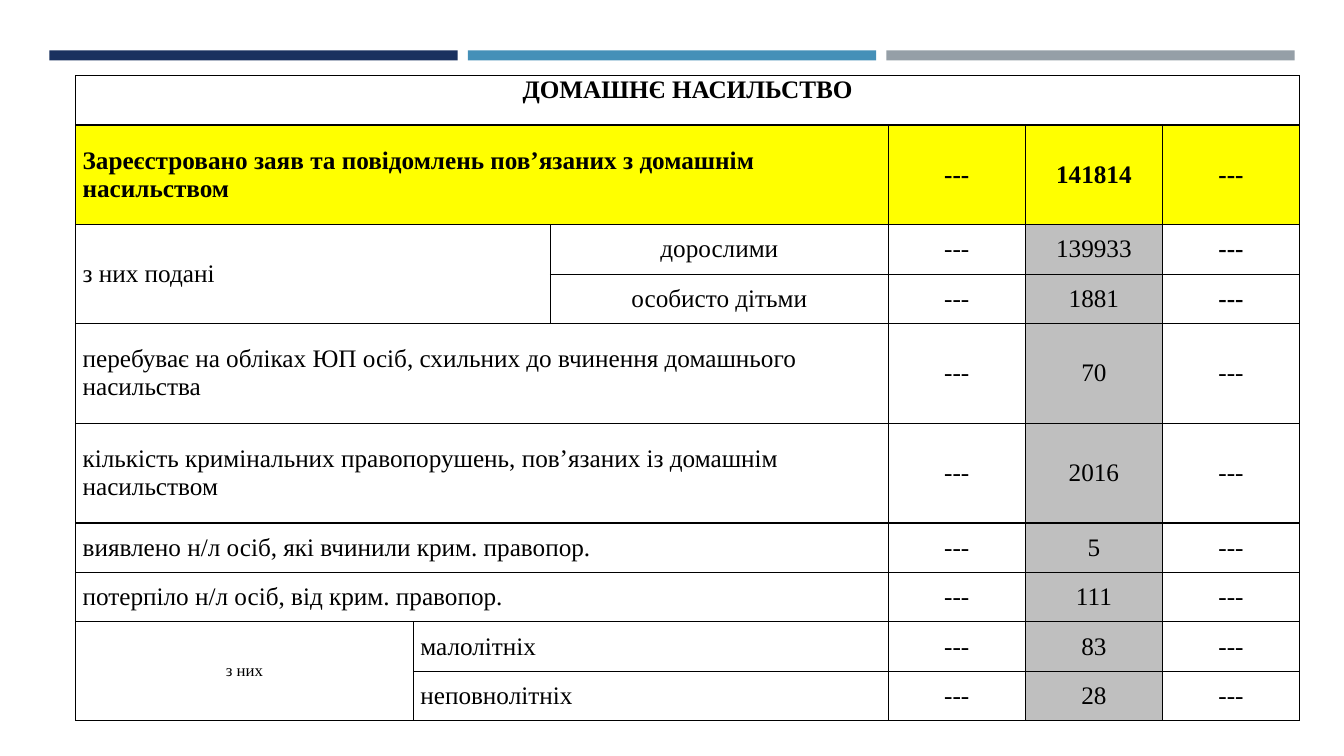
from lxml import etree
from pptx import Presentation
from pptx.dml.color import RGBColor
from pptx.enum.shapes import MSO_SHAPE
from pptx.enum.text import MSO_ANCHOR, PP_ALIGN
from pptx.oxml.ns import qn
from pptx.util import Inches, Pt

COLORS = {
    "navy": "1A315F",
    "blue": "4590B8",
    "steel": "959FA7",
    "black": "000000",
    "yellow": "FFFF00",
    "grey": "BFBFBF",
}
COLUMN_WIDTHS = [3.35, 1.36, 3.35, 1.36, 1.36, 1.36]
ROW_HEIGHTS = [0.49, 0.99, 0.49, 0.49, 0.99, 0.99, 0.49, 0.49, 0.49, 0.49]
TOTAL_ROW = 1
FIRST_VALUE_COLUMN, COUNT_COLUMN, LAST_COLUMN = 3, 4, 5
BOLD_DASH_ROWS = (1, 2, 3)
COUNTS = ["141814", "139933", "1881", "70", "2016", "5", "111", "83", "28"]
CENTER, LEFT = PP_ALIGN.CENTER, PP_ALIGN.LEFT

# row, column, last row, last column, text, alignment, font format
LABELS = [
    (0, 0, 0, 5, "ДОМАШНЄ НАСИЛЬСТВО", CENTER, {"bold": True}),
    (1, 0, 1, 2, "Зареєстровано заяв та повідомлень пов’язаних з домашнім насильством",
     LEFT, {"bold": True}),
    (2, 0, 3, 1, "з них подані", LEFT, {}),
    (2, 2, 2, 2, "дорослими", CENTER, {}),
    (3, 2, 3, 2, "особисто дітьми", CENTER, {}),
    (4, 0, 4, 2, "перебуває на обліках ЮП осіб, схильних до вчинення домашнього насильства",
     LEFT, {}),
    (5, 0, 5, 2, "кількість кримінальних правопорушень, пов’язаних із домашнім насильством",
     LEFT, {}),
    (6, 0, 6, 2, "виявлено н/л осіб, які вчинили крим. правопор.", LEFT, {}),
    (7, 0, 7, 2, "потерпіло н/л осіб, від крим. правопор.", LEFT, {}),
    (8, 0, 9, 0, "з них", CENTER, {"size": Pt(12)}),
    (8, 1, 8, 2, "малолітніх", LEFT, {}),
    (9, 1, 9, 2, "неповнолітніх", LEFT, {}),
]


def rgb(name):
    """Return the named colour."""
    return RGBColor.from_string(COLORS[name])


def add_bar(page, index, color):
    """Add one of the equally spaced bars along the top."""
    bar = page.shapes.add_shape(
        MSO_SHAPE.RECTANGLE, Inches(0.49 + index * 4.15), Inches(0.5), Inches(4.05), Inches(0.1))
    bar.shadow.inherit = False
    bar.fill.solid()
    bar.fill.fore_color.rgb = rgb(color)
    bar.line.fill.background()


def add_borders(cell):
    """Draw a thin black line on each side of a cell."""
    properties = cell._tc.get_or_add_tcPr()
    for side in ("lnL", "lnR", "lnT", "lnB"):
        line = etree.SubElement(properties, qn(f"a:{side}"), w=str(Pt(1)))
        fill = etree.SubElement(line, qn("a:solidFill"))
        etree.SubElement(fill, qn("a:srgbClr"), val=COLORS["black"])


def fill_cell(cell, row, column):
    """Highlight the total row and the count column, and leave other cells clear."""
    if row == TOTAL_ROW:
        color = "yellow"
    elif row > TOTAL_ROW and column == COUNT_COLUMN:
        color = "grey"
    else:
        cell.fill.background()
        return
    cell.fill.solid()
    cell.fill.fore_color.rgb = rgb(color)


def write_cell(cell, text, alignment, formats):
    """Write formatted text into a cell."""
    para = cell.text_frame.paragraphs[0]
    para.alignment = alignment
    span = para.add_run()
    span.text = text
    span.font.color.rgb = rgb("black")
    defaults = {"name": "Times New Roman", "size": Pt(18), "bold": False}
    for name, value in (defaults | formats).items():
        setattr(span.font, name, value)


def format_cell(cell, row, column):
    """Set the margins, anchor, borders and fill of a cell."""
    formats = {
        "margin_left": Inches(0.07),
        "margin_right": Inches(0.07),
        "margin_top": 0,
        "margin_bottom": 0,
        "vertical_anchor": MSO_ANCHOR.MIDDLE if row else MSO_ANCHOR.TOP,
    }
    for name, value in formats.items():
        setattr(cell, name, value)
    add_borders(cell)
    fill_cell(cell, row, column)


def add_grid(page):
    """Add the empty table with its sizes and cell formats."""
    table = page.shapes.add_table(
        len(ROW_HEIGHTS), len(COLUMN_WIDTHS), Inches(0.75), Inches(0.75),
        Inches(sum(COLUMN_WIDTHS)), Inches(sum(ROW_HEIGHTS))).table
    table.first_row = table.horz_banding = False
    for column, width in zip(table.columns, COLUMN_WIDTHS):
        column.width = Inches(width)
    for row, height in zip(table.rows, ROW_HEIGHTS):
        row.height = Inches(height)
    for row in range(len(ROW_HEIGHTS)):
        for column in range(len(COLUMN_WIDTHS)):
            format_cell(table.cell(row, column), row, column)
    return table


def write_labels(table):
    """Merge and write the heading and the row labels."""
    for row, column, last_row, last_column, text, alignment, formats in LABELS:
        cell = table.cell(row, column)
        if (row, column) != (last_row, last_column):
            cell.merge(table.cell(last_row, last_column))
        write_cell(cell, text, alignment, formats)


def write_values(table):
    """Write each count between its two dashes."""
    for row, count in enumerate(COUNTS, start=TOTAL_ROW):
        for column, text in enumerate(("---", count, "---"), start=FIRST_VALUE_COLUMN):
            bold = row == TOTAL_ROW or (column == LAST_COLUMN and row in BOLD_DASH_ROWS)
            write_cell(table.cell(row, column), text, CENTER, {"bold": bold})


def main():
    """Build and save the slide."""
    deck = Presentation()
    deck.slide_width, deck.slide_height = Inches(13.33), Inches(7.5)
    page = deck.slides.add_slide(deck.slide_layouts[6])
    for index, color in enumerate(("navy", "blue", "steel")):
        add_bar(page, index, color)
    table = add_grid(page)
    write_labels(table)
    write_values(table)
    deck.save("out.pptx")


if __name__ == "__main__":
    main()
